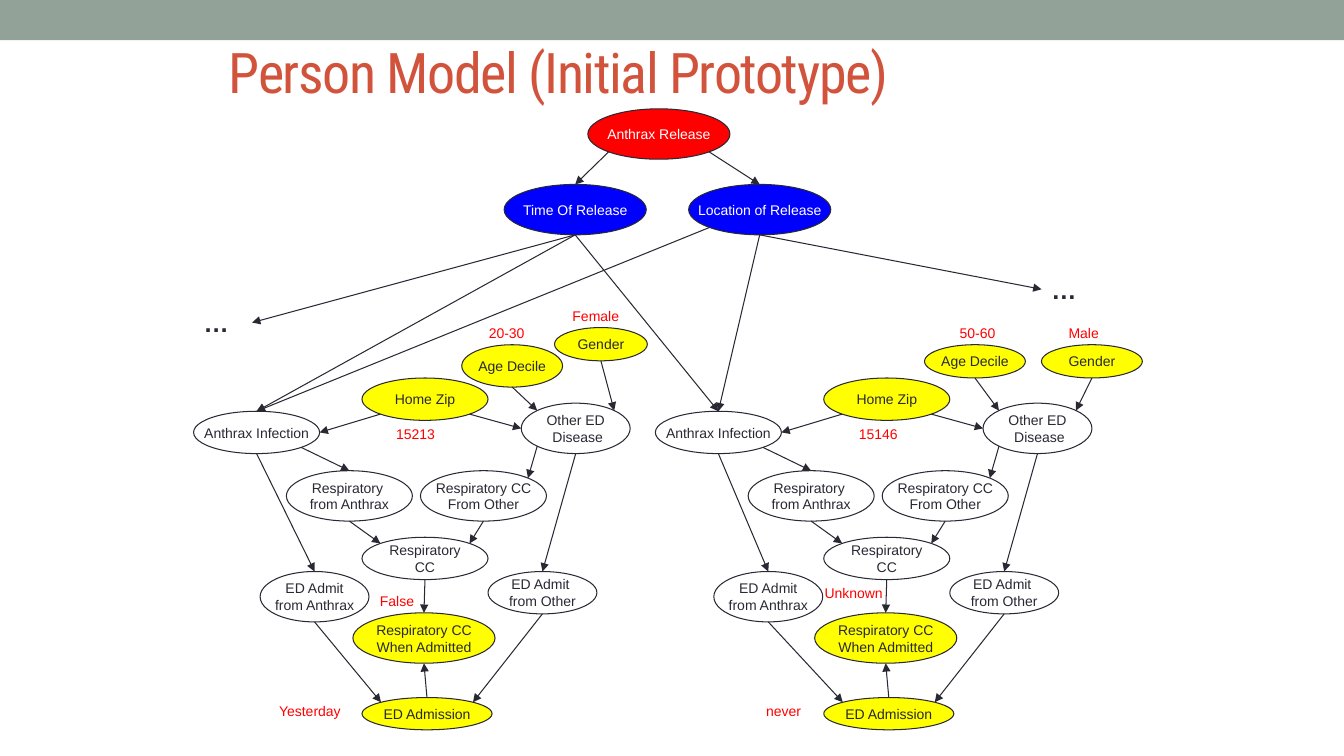
from dataclasses import dataclass
from math import cos, pi, sin

from lxml.etree import SubElement
from pptx import Presentation
from pptx.dml.color import RGBColor
from pptx.enum.shapes import MSO_CONNECTOR, MSO_SHAPE
from pptx.enum.text import MSO_ANCHOR, PP_ALIGN
from pptx.oxml.ns import qn
from pptx.util import Inches, Pt


@dataclass(frozen=True)
class Theme:
    band: str = "93A299"
    title: str = "D2533C"
    ink: str = "292934"
    white: str = "FFFFFF"
    red: str = "FF0000"
    blue: str = "0000FF"
    yellow: str = "FFFF00"
    title_font: str = "Roboto Condensed"
    body_font: str = "Arial"
    title_size: int = 40
    ellipsis_size: int = 18
    node_size: int = 10
    line_width: float = 0.75


THEME = Theme()

# Connection sites of the oval, numbered counter-clockwise from the top
SITES = ["top", "top left", "left", "bottom left",
         "bottom", "bottom right", "right", "top right"]

# Nodes of one person: text, left from the person's origin, top, width, height, fill
PERSON_NODES = {
    "infection": ("Anthrax Infection", 0, 4.08, 1.25, 0.42, None),
    "zip": ("Home Zip", 1.67, 3.75, 1.25, 0.42, THEME.yellow),
    "respiratory anthrax": ("Respiratory \nfrom Anthrax", 0.92, 4.67, 1.25, 0.5, None),
    "other disease": ("Other ED\n Disease", 3.25, 4, 1.08, 0.5, None),
    "respiratory other": ("Respiratory CC\nFrom Other", 2.25, 4.67, 1.25, 0.5, None),
    "respiratory": ("Respiratory\nCC", 1.67, 5.33, 1.25, 0.42, None),
    "when admitted": ("Respiratory CC\nWhen Admitted", 1.58, 6.08, 1.41, 0.5, THEME.yellow),
    "admit other": ("ED Admit \nfrom Other", 2.92, 5.67, 1.08, 0.42, None),
    "admission": ("ED Admission", 1.67, 6.92, 1.29, 0.32, THEME.yellow),
}

# Nodes placed differently for each person
FIRST_PERSON_NODES = {
    "gender": ("Gender", 3.58, 3.25, 0.92, 0.33, THEME.yellow),
    "age": ("Age Decile", 2.66, 3.42, 1, 0.42, THEME.yellow),
    "admit anthrax": ("ED Admit\nfrom Anthrax", 0.66, 5.67, 1.08, 0.5, None),
}
SECOND_PERSON_NODES = {
    "gender": ("Gender", 3.83, 3.42, 1, 0.33, THEME.yellow),
    "age": ("Age Decile", 2.67, 3.42, 1, 0.33, THEME.yellow),
    "admit anthrax": ("ED Admit\nfrom Anthrax", 0.58, 5.67, 1.08, 0.5, None),
}

PERSON_EDGES = [
    ("zip", "bottom left", "infection", "right"),
    ("zip", "bottom right", "other disease", "left"),
    ("age", "bottom", "other disease", "top left"),
    ("gender", "bottom", "other disease", "top right"),
    ("other disease", "bottom", "admit other", "top"),
    ("other disease", "bottom left", "respiratory other", "top right"),
    ("infection", "bottom", "admit anthrax", "top"),
    ("infection", "bottom right", "respiratory anthrax", "top"),
    ("respiratory anthrax", "bottom", "respiratory", "top left"),
    ("respiratory other", "bottom", "respiratory", "top right"),
    ("respiratory", "bottom", "when admitted", "top"),
    ("admission", "top", "when admitted", "bottom"),
    ("admit anthrax", "bottom", "admission", "top left"),
    ("admit other", "bottom", "admission", "top right"),
]

# Observed values: text, left, top, width
OBSERVATIONS = [
    ("Yesterday", 2.67, 6.92, 0.83), ("never", 7.5, 6.92, 0.67),
    ("False", 3.67, 5.83, 0.67), ("15213", 3.83, 4.17, 0.67),
    ("20-30", 4.75, 3.17, 0.67), ("Female", 5.58, 3, 0.67),
    ("Unknown", 8.08, 5.75, 0.83), ("15146", 8.42, 4.17, 0.83),
    ("50-60", 9.42, 3.17, 0.83), ("Male", 10.5, 3.17, 0.83),
]


def add_run(paragraph, text, size, color, font=THEME.body_font, bold=False):
    run = paragraph.add_run()
    run.text = text
    run.font.name = font
    run.font.size = Pt(size)
    run.font.bold = bold
    run.font.color.rgb = RGBColor.from_string(color)
    return run


def add_band(slide):
    band = slide.shapes.add_shape(MSO_SHAPE.RECTANGLE, 0, 0, Inches(13.33), Inches(0.4))
    band.shadow.inherit = False
    band.fill.solid()
    band.fill.fore_color.rgb = RGBColor.from_string(THEME.band)
    band.line.fill.background()


def set_title(slide, text):
    title = slide.shapes.title
    title.left, title.top = Inches(2.17), Inches(0.21)
    title.width, title.height = Inches(9), Inches(1)
    title.text_frame.vertical_anchor = MSO_ANCHOR.MIDDLE
    paragraph = title.text_frame.paragraphs[0]
    paragraph.alignment = PP_ALIGN.LEFT
    run = add_run(paragraph, text, THEME.title_size, THEME.title, THEME.title_font)
    run.font._element.set("spc", "-100")


def add_node(slide, text, left, top, width, height, fill, color=THEME.ink):
    node = slide.shapes.add_shape(MSO_SHAPE.FLOWCHART_CONNECTOR, Inches(left),
                                  Inches(top), Inches(width), Inches(height))
    node.shadow.inherit = False
    if fill:
        node.fill.solid()
        node.fill.fore_color.rgb = RGBColor.from_string(fill)
    else:
        node.fill.background()
    node.line.color.rgb = RGBColor.from_string(THEME.ink)
    node.line.width = Pt(THEME.line_width)
    frame = node.text_frame
    frame.word_wrap = False
    frame.vertical_anchor = MSO_ANCHOR.MIDDLE
    for index, line in enumerate(text.split("\n")):
        paragraph = frame.add_paragraph() if index else frame.paragraphs[0]
        paragraph.alignment = PP_ALIGN.CENTER
        add_run(paragraph, line, THEME.node_size, color)
    return node


def site_point(node, site):
    angle = SITES.index(site) * pi / 4
    return (round(node.left + node.width / 2 * (1 - sin(angle))),
            round(node.top + node.height / 2 * (1 - cos(angle))))


def add_arrow(slide, start, end):
    arrow = slide.shapes.add_connector(MSO_CONNECTOR.STRAIGHT, *start, *end)
    arrow.line.color.rgb = RGBColor.from_string(THEME.ink)
    arrow.line.width = Pt(THEME.line_width)
    SubElement(arrow.line._get_or_add_ln(), qn("a:tailEnd"), type="triangle")
    SubElement(arrow._element.spPr, qn("a:effectLst"))
    return arrow


def link_nodes(slide, source, source_site, target, target_site):
    arrow = add_arrow(slide, site_point(source, source_site), site_point(target, target_site))
    # Glue both ends so that the arrow follows its nodes
    properties = arrow._element.nvCxnSpPr.cNvCxnSpPr
    for tag, node, site in (("a:stCxn", source, source_site), ("a:endCxn", target, target_site)):
        SubElement(properties, qn(tag), id=str(node.shape_id), idx=str(SITES.index(site)))


def add_label(slide, text, left, top, width, height=0.27,
              size=THEME.node_size, color=THEME.red, bold=False):
    label = slide.shapes.add_textbox(Inches(left), Inches(top), Inches(width), Inches(height))
    label.text_frame.word_wrap = True
    add_run(label.text_frame.paragraphs[0], text, size, color, bold=bold)


def add_person(slide, origin, own_nodes):
    nodes = {}
    for name, (text, left, *place) in (PERSON_NODES | own_nodes).items():
        nodes[name] = add_node(slide, text, origin + left, *place)
    for source, source_site, target, target_site in PERSON_EDGES:
        link_nodes(slide, nodes[source], source_site, nodes[target], target_site)
    return nodes["infection"]


def main():
    presentation = Presentation()
    presentation.slide_width, presentation.slide_height = Inches(13.33), Inches(7.5)
    slide = presentation.slides.add_slide(presentation.slide_layouts[5])
    add_band(slide)
    set_title(slide, "Person Model (Initial Prototype)")

    # Release nodes shared by everyone
    release = add_node(slide, "Anthrax Release", 5.83, 1.08, 1.41, 0.5, THEME.red, THEME.white)
    location = add_node(slide, "Location of Release", 6.83, 1.83, 1.41, 0.5, THEME.blue, THEME.white)
    time = add_node(slide, "Time Of Release", 5, 1.83, 1.41, 0.5, THEME.blue, THEME.white)
    link_nodes(slide, release, "bottom right", location, "top")
    link_nodes(slide, release, "bottom left", time, "top")

    # Two people, each reached from both release nodes
    first = add_person(slide, 1.92, FIRST_PERSON_NODES)
    second = add_person(slide, 6.5, SECOND_PERSON_NODES)
    for infection, location_site in ((first, "bottom left"), (second, "bottom")):
        link_nodes(slide, time, "bottom", infection, "top")
        link_nodes(slide, location, location_site, infection, "top")

    # Further people on either side
    for source, tip, left, top in ((time, (2.5, 3.2), 1.92, 3), (location, (10.33, 2.87), 10.33, 2.67)):
        add_label(slide, "…", left, top, 0.58, 0.4, THEME.ellipsis_size, THEME.ink, bold=True)
        add_arrow(slide, site_point(source, "bottom"), [Inches(value) for value in tip])

    for observation in OBSERVATIONS:
        add_label(slide, *observation)
    presentation.save("out.pptx")


if __name__ == "__main__":
    main()
